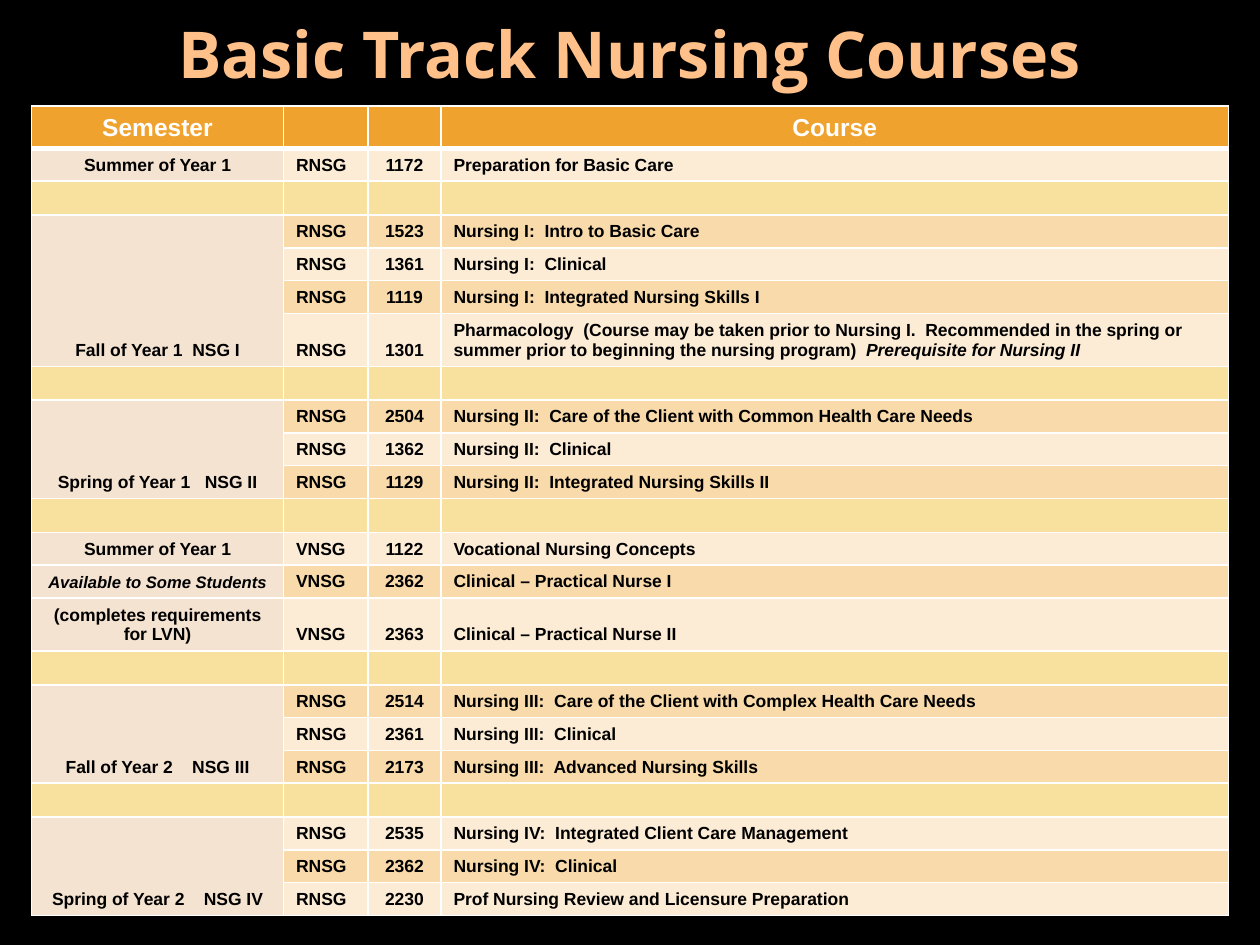
import pptx
import pptx.util
import pptx.dml.color
import pptx.enum.text
import pptx.oxml.ns
from lxml import etree

Pt = pptx.util.Pt
RGB = pptx.dml.color.RGBColor.from_string
PP_ALIGN = pptx.enum.text.PP_ALIGN
ANCHOR = pptx.enum.text.MSO_ANCHOR
qn = pptx.oxml.ns.qn

COLORS = {
    "background": "000000",
    "title": "FFC089",
    "title_end": "FFB66E",
    "header": "F0A22E",
    "semester": "F5E3D1",
    "light": "FCECD5",
    "dark": "F9DAAB",
    "gap": "F8E19F",
    "white": "FFFFFF",
    "black": "000000",
}

COL_WIDTHS = [144, 48.25, 41.75, 450]
HEADER_HEIGHT, ROW_HEIGHT, TALL_HEIGHT = 23.5, 18.75, 30.25
TALL_COURSES = ("1301", "2363")
ITALIC_SEMESTER = "Available to Some Students"
PREREQUISITE = "Prerequisite for Nursing II"

BLOCKS = [
    [("Summer of Year 1", [("RNSG", "1172", "Preparation for Basic Care")])],
    [("Fall of Year 1  NSG I", [
        ("RNSG", "1523", "Nursing I:  Intro to Basic Care"),
        ("RNSG", "1361", "Nursing I:  Clinical"),
        ("RNSG", "1119", "Nursing I:  Integrated Nursing Skills I"),
        ("RNSG", "1301", "Pharmacology  (Course may be taken prior to Nursing I.  "
         "Recommended in the spring or summer prior to beginning the nursing program)  "),
    ])],
    [("Spring of Year 1   NSG II", [
        ("RNSG", "2504", "Nursing II:  Care of the Client with Common Health Care Needs"),
        ("RNSG", "1362", "Nursing II:  Clinical"),
        ("RNSG", "1129", "Nursing II:  Integrated Nursing Skills II"),
    ])],
    [
        ("Summer of Year 1", [("VNSG", "1122", "Vocational Nursing Concepts")]),
        (ITALIC_SEMESTER, [("VNSG", "2362", "Clinical – Practical Nurse I")]),
        ("(completes requirements for LVN)", [("VNSG", "2363", "Clinical – Practical Nurse II")]),
    ],
    [("Fall of Year 2    NSG III", [
        ("RNSG", "2514", "Nursing III:  Care of the Client with Complex Health Care Needs"),
        ("RNSG", "2361", "Nursing III:  Clinical"),
        ("RNSG", "2173", "Nursing III:  Advanced Nursing Skills"),
    ])],
    [("Spring of Year 2    NSG IV", [
        ("RNSG", "2535", "Nursing IV:  Integrated Client Care Management"),
        ("RNSG", "2362", "Nursing IV:  Clinical"),
        ("RNSG", "2230", "Prof Nursing Review and Licensure Preparation"),
    ])],
]


def add_title(s, x, y, w, h):
    sp = s.shapes.title
    sp.left, sp.top, sp.width, sp.height = Pt(x), Pt(y), Pt(w), Pt(h)
    tf = sp.text_frame
    tf.text = "Basic Track Nursing Courses"
    tf.vertical_anchor = ANCHOR.MIDDLE
    tf.auto_size = pptx.enum.text.MSO_AUTO_SIZE.NONE
    p = tf.paragraphs[0]
    p.alignment = PP_ALIGN.CENTER
    font = p.runs[0].font
    font.name, font.size, font.bold = "Open Sans", Pt(36.9), True
    font.fill.gradient()
    font.fill.gradient_angle = 280
    stops = font.fill.gradient_stops
    for stop, position, color in zip(stops, (0.73, 1), ("title", "title_end")):
        stop.position = position
        stop.color.rgb = RGB(COLORS[color])


def set_borders(cell, top=1, bottom=1):
    tcPr = cell._tc.get_or_add_tcPr()
    for side, width in (("L", 1), ("R", 1), ("T", top), ("B", bottom)):
        ln = etree.SubElement(tcPr, qn(f"a:ln{side}"), w=str(Pt(width)))
        fill = etree.SubElement(ln, qn("a:solidFill"))
        etree.SubElement(fill, qn("a:srgbClr"), val=COLORS["white"])


def style_run(r, size, color):
    r.font.name, r.font.size, r.font.bold = "Arial", Pt(size), True
    r.font.color.rgb = RGB(COLORS[color])


def fill_cell(cell, text, fill, size=10, color="black", centered=False):
    cell.fill.solid()
    cell.fill.fore_color.rgb = RGB(COLORS[fill])
    cell.vertical_anchor = ANCHOR.BOTTOM
    p = cell.text_frame.paragraphs[0]
    p.alignment = PP_ALIGN.CENTER if centered else PP_ALIGN.LEFT
    if text:
        p.text = text
        style_run(p.runs[0], size, color)
    else:
        etree.SubElement(p._p, qn("a:endParaRPr"), sz=str(size * 100))
    return p


def add_course_table(s, x, y, w):
    blocks_rows = sum(len(courses) for block in BLOCKS for _, courses in block)
    n_rows = 1 + blocks_rows + len(BLOCKS) - 1
    height = HEADER_HEIGHT + ROW_HEIGHT * (n_rows - 1) + len(TALL_COURSES) * (TALL_HEIGHT - ROW_HEIGHT)
    table = s.shapes.add_table(n_rows, len(COL_WIDTHS), Pt(x), Pt(y), Pt(w), Pt(height)).table
    for column, width in zip(table.columns, COL_WIDTHS):
        column.width = Pt(width)
    for i, row in enumerate(table.rows):
        row.height = Pt(ROW_HEIGHT if i else HEADER_HEIGHT)
        for cell in row.cells:
            set_borders(cell, top=3 if i == 1 else 1, bottom=1 if i else 3)

    for c, text in enumerate(("Semester", "", "", "Course")):
        fill_cell(table.cell(0, c), text, "header", 14, "white", True)

    row, band = 1, 0
    for b, block in enumerate(BLOCKS):
        if b:
            for c in range(len(COL_WIDTHS)):
                fill_cell(table.cell(row, c), "", "gap")
            row += 1
        for semester, courses in block:
            first = row
            for prefix, number, name in courses:
                fill = ("light", "dark")[band % 2]
                label = semester if row == first else ""
                italic = label == ITALIC_SEMESTER
                p = fill_cell(table.cell(row, 0), label, "semester", 9.5 if italic else 10, centered=True)
                if italic:
                    p.runs[0].font.italic = True
                fill_cell(table.cell(row, 1), prefix, fill)
                fill_cell(table.cell(row, 2), number, fill, centered=True)
                p = fill_cell(table.cell(row, 3), name, fill)
                if number == "1301":
                    r = p.add_run()
                    r.text = PREREQUISITE
                    style_run(r, 10, "black")
                    r.font.italic = True
                if number in TALL_COURSES:
                    table.rows[row].height = Pt(TALL_HEIGHT)
                row += 1
                band += 1
            if len(courses) > 1:
                table.cell(first, 0).merge(table.cell(row - 1, 0))


def main():
    prs = pptx.Presentation()
    prs.slide_width, prs.slide_height = Pt(720), Pt(540)
    s = prs.slides.add_slide(prs.slide_layouts[5])
    s.background.fill.solid()
    s.background.fill.fore_color.rgb = RGB(COLORS["background"])
    add_title(s, 36, 12, 648, 36)
    add_course_table(s, 18, 60.5, 684)
    prs.save("out.pptx")


if __name__ == "__main__":
    main()
